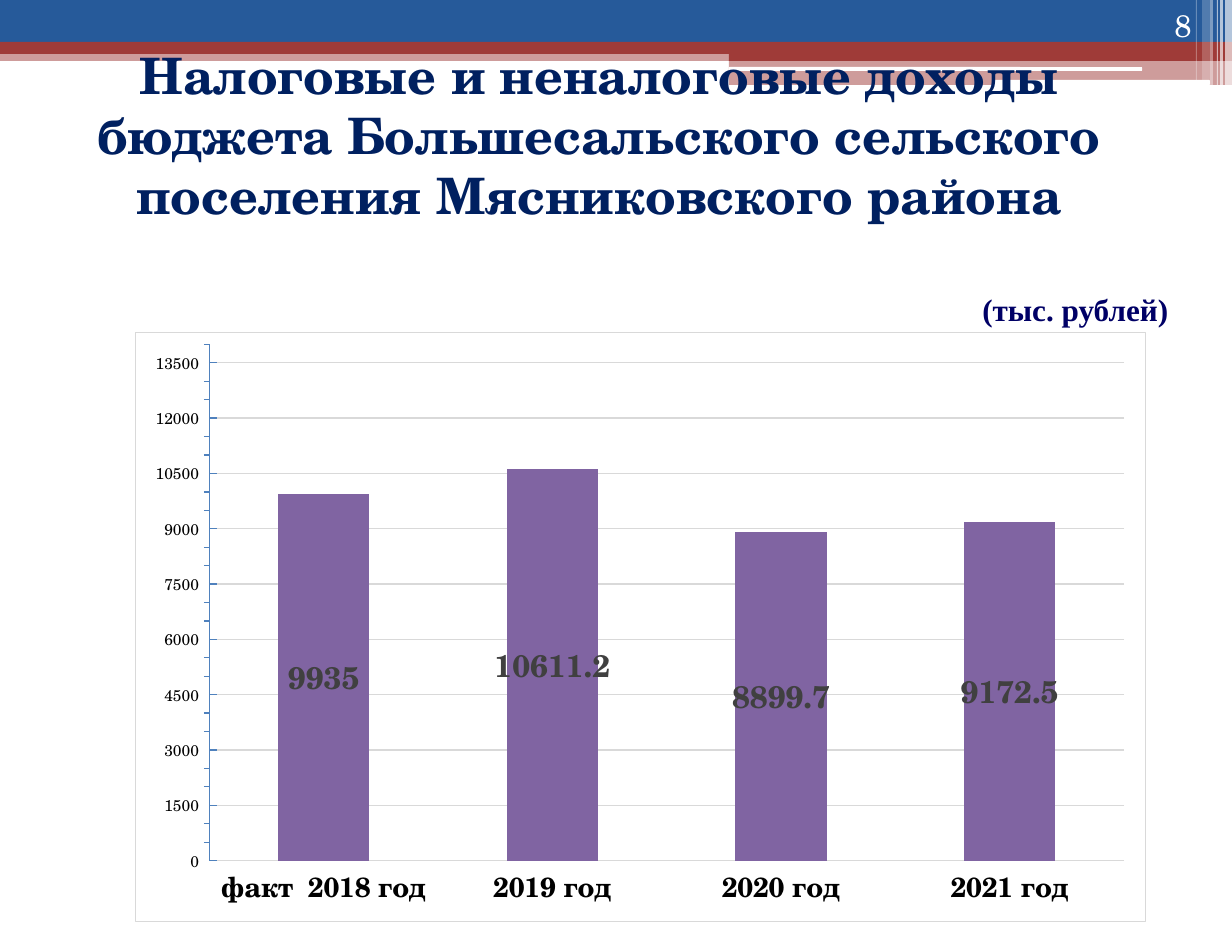
from lxml.etree import SubElement
from pptx import Presentation
from pptx.chart.data import CategoryChartData
from pptx.dml.color import RGBColor
from pptx.enum.chart import XL_CHART_TYPE, XL_LABEL_POSITION, XL_TICK_MARK
from pptx.enum.shapes import MSO_SHAPE
from pptx.enum.text import MSO_ANCHOR, PP_ALIGN
from pptx.oxml import parse_xml
from pptx.oxml.ns import nsdecls, qn
from pptx.util import Pt

PX = 7333  # EMU in one px
SERIF = "TeX Gyre Schola"
COLORS = {
    "blue": "265A9A", "red": "9F3B38", "white": "FFFFFF", "black": "000000",
    "title": "002060", "unit": "000066", "bar": "8064A2", "label": "404040",
    "axis": "4F81BD", "grid": "D9D9D9",
}

# left, top, width, height, colour, opacity in percent
BANDS = [
    (0, 50, 1232, 11, "red", 50),
    (0, 0, 1232, 42, "blue", 100),
    (0, 42, 1232, 12, "red", 100),
    (729, 49, 503, 12, "red", 100),
    (729, 60, 503, 25, "red", 50),
]
HIGHLIGHTS = [(729, 67, 413, 4), (994, 80, 216, 5)]
# left, width, height, opacity in percent
STRIPES = [
    (1225, 7, 85, 65), (1220, 3, 85, 65), (1217, 1, 85, 60),
    (1210, 3, 85, 40), (1202, 8, 80, 20), (1196, 1, 80, 30),
]
INCOME = {
    "факт  2018 год": 9935,
    "2019 год": 10611.2,
    "2020 год": 8899.7,
    "2021 год": 9172.5,
}


def color(name):
    return RGBColor.from_string(COLORS[name])


def emu(*lengths):
    return [length * PX for length in lengths]


def set_font(font, size, color_name, bold=False, name=SERIF):
    font.name = name
    font.size = Pt(size)
    font.bold = bold
    font.color.rgb = color(color_name)


def add_block(page, place, color_name, opacity=100, kind=MSO_SHAPE.RECTANGLE):
    block = page.shapes.add_shape(kind, *emu(*place))
    block.shadow.inherit = False
    block.fill.solid()
    block.fill.fore_color.rgb = color(color_name)
    block.line.fill.background()
    if opacity < 100:
        fill_color = block.fill._xPr.find(".//" + qn("a:srgbClr"))
        SubElement(fill_color, qn("a:alpha")).set("val", str(opacity * 1000))


def add_text(page, place, text, size, color_name, bold=False, name=SERIF,
             align=PP_ALIGN.LEFT, anchor=MSO_ANCHOR.TOP, wrap=True):
    frame = page.shapes.add_textbox(*emu(*place)).text_frame
    frame.word_wrap = wrap
    frame.vertical_anchor = anchor
    frame.text = text
    para = frame.paragraphs[0]
    para.alignment = align
    set_font(para.runs[0].font, size, color_name, bold, name)


def set_line(line, color_name):
    line.color.rgb = color(color_name)
    line.width = Pt(0.75)


def frame_chart(chart):
    """Fix the plot area's place and draw the thin border of the chart."""
    plot_area = chart._chartSpace.chart.plotArea
    for layout in plot_area.findall(qn("c:layout")):
        plot_area.remove(layout)
    plot_area.insert(0, parse_xml(
        f'<c:layout {nsdecls("c")}><c:manualLayout>'
        '<c:layoutTarget val="inner"/><c:xMode val="edge"/><c:yMode val="edge"/>'
        '<c:x val="0.073"/><c:y val="0.02"/><c:w val="0.906"/><c:h val="0.877"/>'
        '</c:manualLayout></c:layout>'))
    chart._chartSpace.chart.addnext(parse_xml(
        f'<c:spPr {nsdecls("c", "a")}><a:noFill/><a:ln w="9525"><a:solidFill>'
        f'<a:srgbClr val="{COLORS["grid"]}"/></a:solidFill></a:ln></c:spPr>'))


def add_income_chart(page, place):
    data = CategoryChartData()
    data.categories = list(INCOME)
    data.add_series("Series 1", list(INCOME.values()))
    chart = page.shapes.add_chart(
        XL_CHART_TYPE.COLUMN_STACKED, *emu(*place), data).chart
    chart.has_title = False
    chart.has_legend = False
    set_font(chart.font, 10, "black")
    frame_chart(chart)

    # Bars and their labels
    plot = chart.plots[0]
    plot.gap_width = 150
    plot.overlap = 100
    plot.vary_by_categories = False
    bars = plot.series[0]
    bars.format.fill.solid()
    bars.format.fill.fore_color.rgb = color("bar")
    labels = bars.data_labels
    labels.show_value = True
    labels.position = XL_LABEL_POSITION.CENTER
    set_font(labels.font, 18, "label", bold=True)

    # Year axis
    years = chart.category_axis
    years.major_tick_mark = XL_TICK_MARK.NONE
    years.format.line.fill.background()
    set_font(years.tick_labels.font, 16, "black", bold=True)

    # Value axis
    values = chart.value_axis
    values.minimum_scale = 0
    values.maximum_scale = 14000
    values.major_unit = 1500
    values.minor_unit = 500
    values.major_tick_mark = XL_TICK_MARK.INSIDE
    values.minor_tick_mark = XL_TICK_MARK.OUTSIDE
    set_line(values.format.line, "axis")
    set_line(values.major_gridlines.format.line, "grid")
    set_font(values.tick_labels.font, 9, "black")


def main():
    deck = Presentation()
    deck.slide_width, deck.slide_height = emu(1232, 935)
    page = deck.slides.add_slide(deck.slide_layouts[6])

    # Header band
    for *place, color_name, opacity in BANDS:
        add_block(page, place, color_name, opacity)
    for place in HIGHLIGHTS:
        add_block(page, place, "white", kind=MSO_SHAPE.ROUNDED_RECTANGLE)
    for left, width, height, opacity in STRIPES:
        add_block(page, (left, 0, width, height), "white", opacity)

    # Page number, title and unit
    add_text(page, (1102, 0, 102, 50), "8", 18, "white",
             align=PP_ALIGN.RIGHT, anchor=MSO_ANCHOR.BOTTOM)
    add_text(page, (76, 95, 1047, 79),
             "Налоговые и неналоговые доходы бюджета Большесальского "
             "сельского поселения Мясниковского района",
             29, "title", bold=True, align=PP_ALIGN.CENTER,
             anchor=MSO_ANCHOR.MIDDLE)
    add_text(page, (970, 284, 213, 50), "(тыс. рублей)", 18, "unit",
             bold=True, name="Times New Roman", wrap=False)

    # Income by year
    add_income_chart(page, (135, 332, 1011, 590))

    deck.save("out.pptx")


if __name__ == "__main__":
    main()
